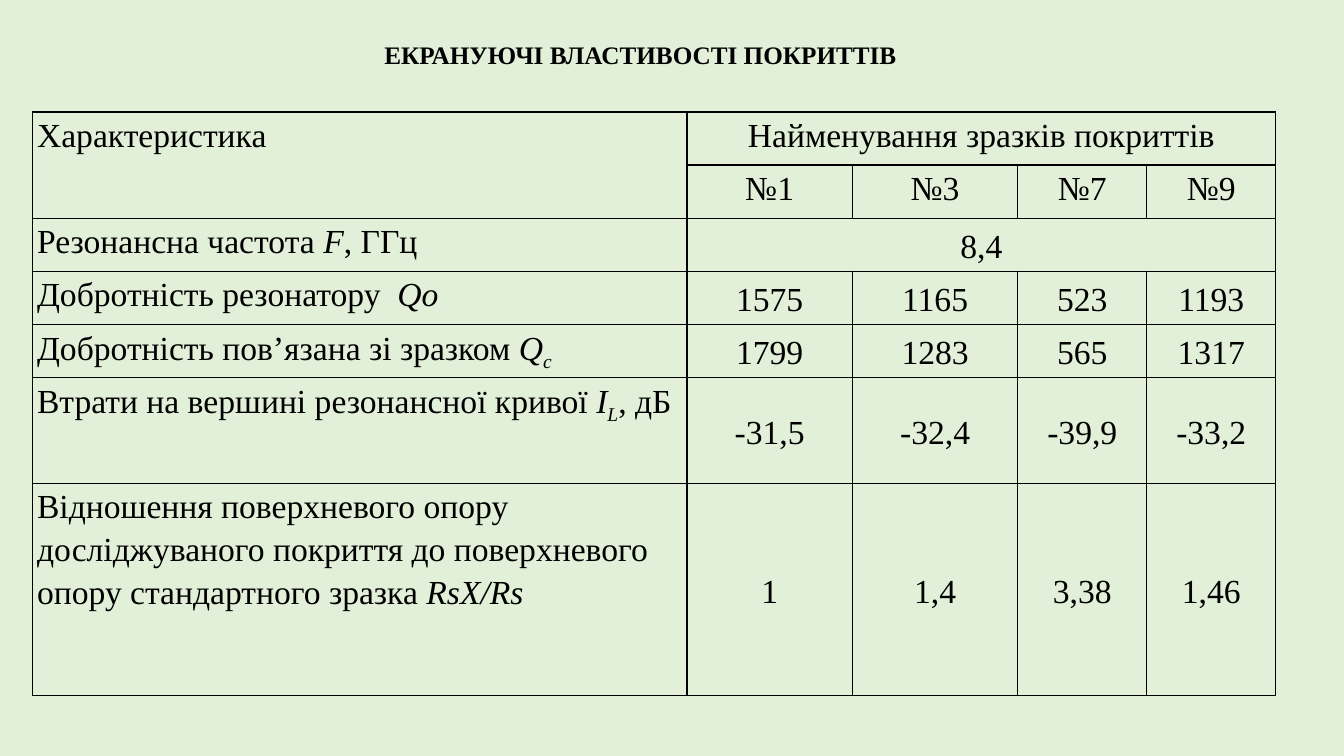
from pptx import Presentation
from pptx.dml.color import RGBColor
from pptx.enum.text import MSO_ANCHOR, PP_ALIGN
from pptx.oxml import parse_xml
from pptx.oxml.ns import nsdecls
from pptx.util import Pt

HUES = {"back": "E2F0D9", "ink": "000000"}
FACE = "Times New Roman"
TITLE = "ЕКРАНУЮЧІ ВЛАСТИВОСТІ ПОКРИТТІВ "
HEADS = ["Характеристика", "Найменування зразків покриттів"]
NAMES = ["№1", "№3", "№7", "№9"]
ROWS = [
    ([("Резонансна частота ", ""), ("F", "i"), (", ГГц", "")], ["8,4"]),
    ([("Добротність резонатору  ", ""), ("Qo", "i")],
     ["1575", "1165", "523", "1193"]),
    ([("Добротність пов’язана зі зразком ", ""), ("Q", "i"), ("c", "sub")],
     ["1799", "1283", "565", "1317"]),
    ([("Втрати на вершині резонансної кривої ", ""), ("I", "i"),
      ("L", "sub"), (", дБ", "")],
     ["-31,5", "-32,4", "-39,9", "-33,2"]),
    ([("Відношення поверхневого опору досліджуваного покриття "
       "до поверхневого опору стандартного зразка ", ""), ("RsХ/Rs", "i")],
     ["1", "1,4", "3,38", "1,46"]),
]
SPANS = [(0, 0, 1, 0), (0, 1, 0, 4), (2, 1, 2, 4)]
WIDTHS = [467.2, 118.2, 118.2, 92.1, 92.1]
UNIT = 37.9
TALL = [1, 1, 1, 1, 1, 2, 4]

TOP, MID = MSO_ANCHOR.TOP, MSO_ANCHOR.MIDDLE
LEFT, CENTER = PP_ALIGN.LEFT, PP_ALIGN.CENTER
INSETS = {"margin_left": Pt(3), "margin_right": Pt(3),
          "margin_top": 0, "margin_bottom": 0}


def apply(item, vals):
    for key, val in vals.items():
        setattr(item, key, val)


def write(frame, parts, size, align, space=1.0, bold=False):
    para = frame.paragraphs[0]
    apply(para, {"alignment": align, "line_spacing": space})
    for text, style in parts:
        run = para.add_run()
        run.text = text
        apply(run.font, {"name": FACE, "size": Pt(size), "bold": bold,
                         "italic": style != ""})
        run.font.color.rgb = RGBColor.from_string(HUES["ink"])
        if style == "sub":
            run._r.get_or_add_rPr().set("baseline", "-25000")


def border(cell):
    props = cell._tc.get_or_add_tcPr()
    for pos, side in enumerate("LRTB"):
        props.insert(pos, parse_xml(
            f'<a:ln{side} {nsdecls("a")} w="{Pt(1)}"><a:solidFill>'
            f'<a:srgbClr val="{HUES["ink"]}"/></a:solidFill></a:ln{side}>'))


def fill(grid, row, col, parts, align, anchor=TOP):
    cell = grid.cell(row, col)
    cell.vertical_anchor = anchor
    write(cell.text_frame, parts, 24, align, 1.15)


def main():
    deck = Presentation()
    apply(deck, {"slide_width": Pt(960), "slide_height": Pt(540)})
    slide = deck.slides.add_slide(deck.slide_layouts[6])
    back = slide.background.fill
    back.solid()
    back.fore_color.rgb = RGBColor.from_string(HUES["back"])

    box = slide.shapes.add_textbox(Pt(62), Pt(17.3), Pt(795.6), Pt(42.5))
    apply(box.text_frame, {"word_wrap": True, "vertical_anchor": MID})
    write(box.text_frame, [(TITLE, "")], 18, CENTER, bold=True)

    grid = slide.shapes.add_table(
        len(TALL), len(WIDTHS), Pt(23.5), Pt(80),
        Pt(sum(WIDTHS)), Pt(UNIT * sum(TALL))).table
    apply(grid, {"first_row": False, "horz_banding": False})
    for col, width in zip(grid.columns, WIDTHS):
        col.width = Pt(width)
    for row, tall in zip(grid.rows, TALL):
        row.height = Pt(UNIT * tall)
    for cell in grid.iter_cells():
        apply(cell, INSETS)
        cell.fill.background()
        border(cell)
    for top, left, low, right in SPANS:
        grid.cell(top, left).merge(grid.cell(low, right))

    for col, (head, align) in enumerate(zip(HEADS, (LEFT, CENTER))):
        fill(grid, 0, col, [(head, "")], align)
    for col, name in enumerate(NAMES, 1):
        fill(grid, 1, col, [(name, "")], CENTER)
    for row, (label, vals) in enumerate(ROWS, 2):
        fill(grid, row, 0, label, LEFT)
        for col, val in enumerate(vals, 1):
            fill(grid, row, col, [(val, "")], CENTER, MID)

    deck.save("out.pptx")


if __name__ == "__main__":
    main()
